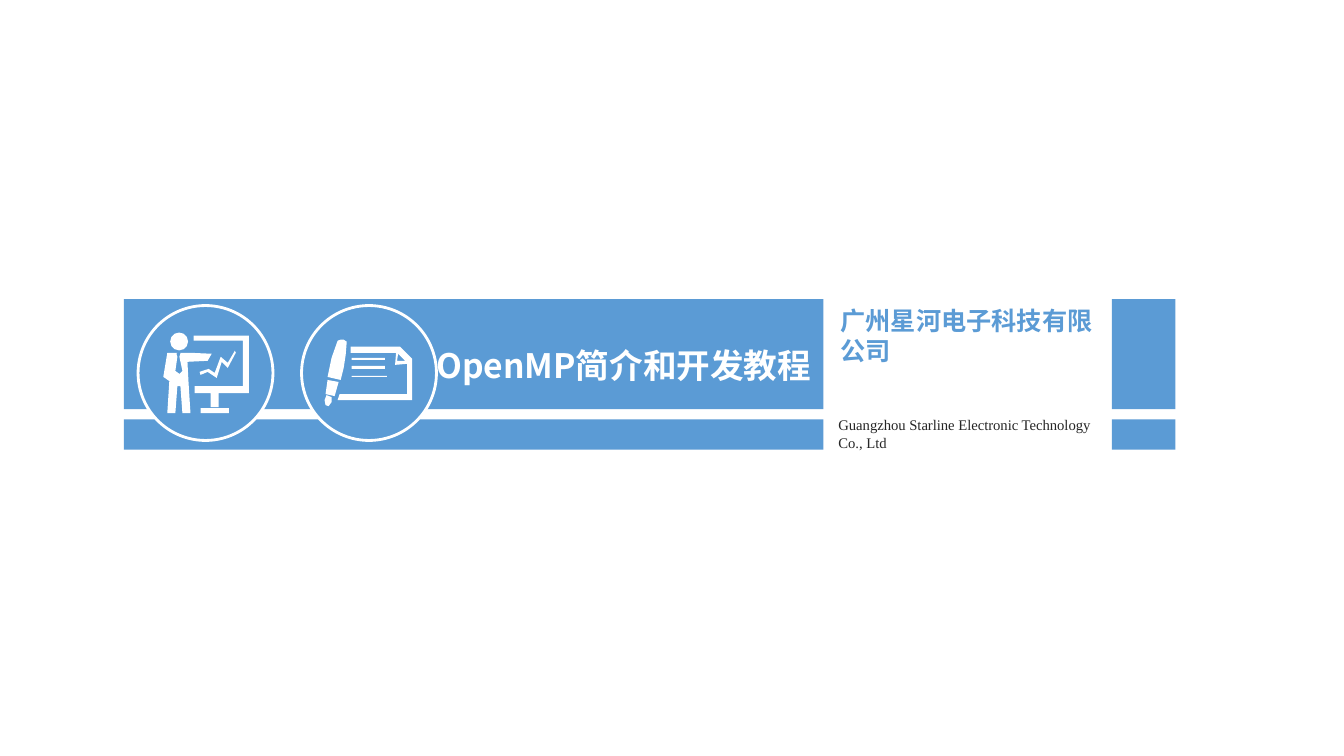
from dataclasses import dataclass
from itertools import product

from lxml import etree
from pptx import Presentation
from pptx.dml.color import RGBColor
from pptx.enum import shapes as kinds, text as txt
from pptx.oxml import ns
from pptx.util import Cm, Pt


@dataclass(frozen=True)
class Theme:
    blue: RGBColor = RGBColor(0x5B, 0x9B, 0xD5)
    white: RGBColor = RGBColor(0xFF, 0xFF, 0xFF)
    dark: RGBColor = RGBColor(0x26, 0x26, 0x26)
    sans: str = "Noto Sans CJK SC"
    serif: str = "Times New Roman"
    title: float = 24
    firm: float = 18
    small: float = 10.5
    ring: float = 2


THEME = Theme()
UNIT = Cm(2.54) / 100
COLS = [(3.12, 17.63), (28.02, 1.6)]
ROWS = [(7.54, 2.77), (10.57, 0.76)]


def block(x, y, w, h):
    return [(x, y), (x + w, y), (x + w, y + h), (x, y + h)]


PEN = [
    [(335, 338), (338, 337), (341, 337), (344, 339), (343, 352),
     (341, 365), (338, 377), (325, 374), (329, 355)],
    [(325, 377), (336, 379), (332, 393), (323, 391)],
    [(324, 392), (329, 394), (329, 399), (326, 403), (323, 402), (322, 397)],
]
PAGE = [
    [(337, 391), (335, 397), (409, 397), (409, 356), (397, 344),
     (348, 344), (348, 350), (393, 350), (392, 362), (404, 361), (404, 391)],
    [(402, 358), (394, 358), (395, 351)],
    block(349, 355, 33, 2),
    block(349, 363, 33, 3),
    block(349, 373, 35, 1.5),
]
BOARD = [
    [(217, 390), (247, 390), (247, 333), (192, 333), (192, 338), (241, 338),
     (241, 383), (193, 383), (193, 390), (209, 390), (209, 404), (217, 404)],
    block(199, 405, 28, 5),
    [(198, 369), (207, 666 - 300), (213, 370), (219, 354), (226, 360),
     (233, 348), (234, 350), (226, 365), (220, 359), (215, 375),
     (206, 369), (199, 372)],
]
MAN = [
    [(162, 374), (168, 378), (166, 410), (174, 410), (176, 383), (179, 383),
     (181, 410), (189, 410), (187, 378), (186, 359), (206, 358), (210, 351),
     (188, 350), (179, 350), (179, 351), (178, 354), (181, 368), (178, 371),
     (174, 368), (176, 354), (175, 351), (176, 350), (166, 350)],
]


def paint(shape, fill, edge=None):
    shape.shadow.inherit = False
    shape.fill.solid()
    shape.fill.fore_color.rgb = fill
    if edge is None:
        shape.line.fill.background()
    else:
        shape.line.color.rgb = edge
        shape.line.width = Pt(THEME.ring)


def solid(slide, kind, box, fill, edge=None):
    shape = slide.shapes.add_shape(kind, *map(Cm, box))
    paint(shape, fill, edge)


def icon(slide, loops):
    pen = slide.shapes.build_freeform(*loops[0][0], scale=UNIT)
    pen.add_line_segments(loops[0][1:], close=True)
    for loop in loops[1:]:
        pen.move_to(*loop[0])
        pen.add_line_segments(loop[1:], close=True)
    paint(pen.convert_to_shape(), THEME.white)


def write(shape, box, words, size, face, color, bold=False, lead=1.0):
    shape.left, shape.top, shape.width, shape.height = map(Cm, box)
    frame = shape.text_frame
    frame.word_wrap = True
    frame.auto_size = txt.MSO_AUTO_SIZE.SHAPE_TO_FIT_TEXT
    frame.vertical_anchor = txt.MSO_ANCHOR.TOP
    para = frame.paragraphs[0]
    para.alignment = txt.PP_ALIGN.LEFT
    para.space_before = Pt(0)
    para.line_spacing = lead
    run = para.add_run()
    run.text = words
    font = run.font
    font.name, font.size, font.bold = face, Pt(size), bold
    font.color.rgb = color
    east = etree.SubElement(run._r.get_or_add_rPr(), ns.qn("a:ea"))
    east.set("typeface", face)


def main():
    deck = Presentation()
    deck.slide_width, deck.slide_height = Cm(33.87), Cm(19.05)
    slide = deck.slides.add_slide(deck.slide_layouts[0])
    title, firm = slide.placeholders
    rect, oval = kinds.MSO_SHAPE.RECTANGLE, kinds.MSO_SHAPE.OVAL

    write(firm, (20.93, 7.57, 7.14, 1.83), "广州星河电子科技有限公司",
          THEME.firm, THEME.sans, THEME.blue, bold=True)
    note = slide.shapes.add_textbox(0, 0, 0, 0)
    write(note, (20.88, 10.36, 7.14, 1.19),
          "Guangzhou Starline Electronic Technology Co., Ltd",
          THEME.small, THEME.serif, THEME.dark)

    for (x, w), (y, h) in product(COLS, ROWS):
        solid(slide, rect, (x, y, w, h), THEME.blue)

    write(title, (10.74, 8.31, 10.41, 1.55), "OpenMP简介和开发教程",
          THEME.title, THEME.sans, THEME.white, bold=True, lead=1.25)
    slide.shapes._spTree.append(title.element)

    for x, parts in ((7.6, (PEN, PAGE)), (3.48, (BOARD, MAN))):
        solid(slide, oval, (x, 7.7, 3.4, 3.4), THEME.blue, THEME.white)
        for loops in parts:
            icon(slide, loops)
    solid(slide, oval, (4.29, 8.38, 0.45, 0.45), THEME.white)

    deck.save("out.pptx")


if __name__ == "__main__":
    main()
